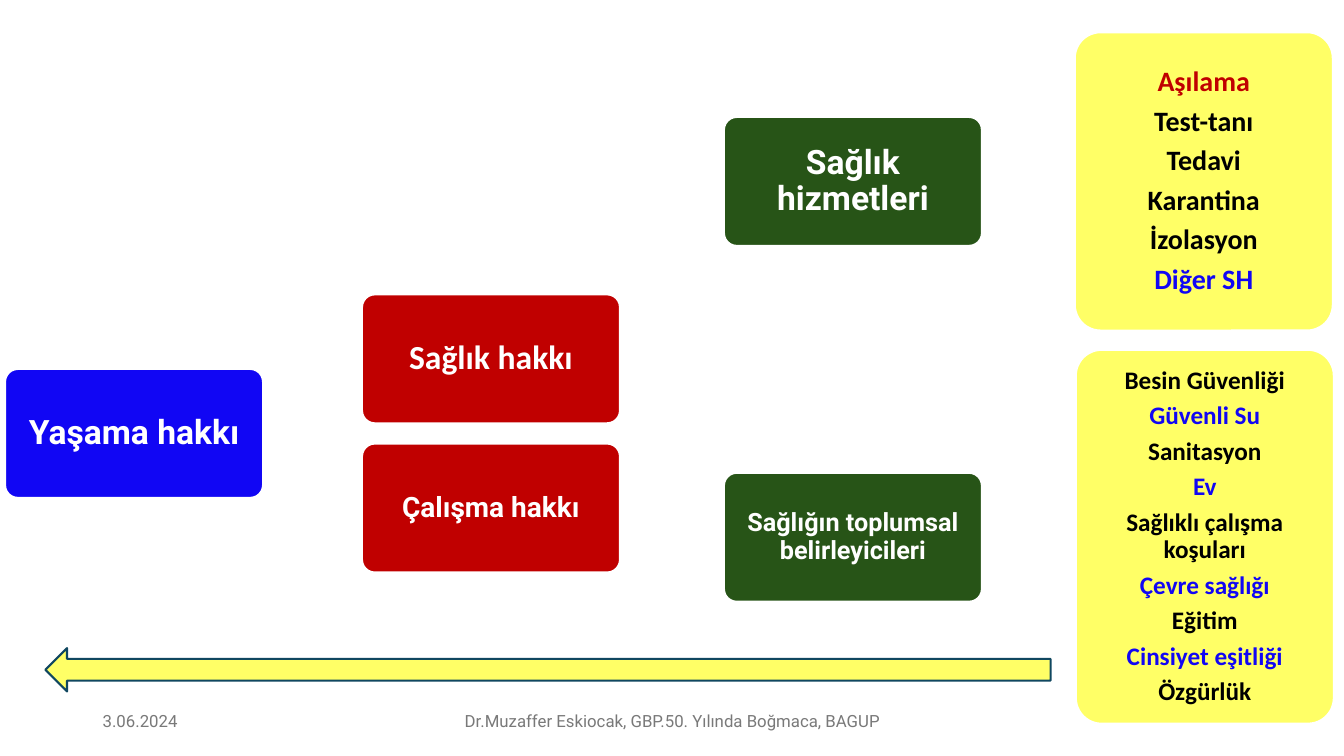
from pptx import Presentation
from pptx.dml.color import RGBColor
from pptx.enum.shapes import MSO_SHAPE
from pptx.enum.text import MSO_ANCHOR, PP_ALIGN
from pptx.util import Inches, Pt

BLUE, RED, GREEN, YELLOW = "1106F4", "C00000", "275417", "FFFF66"
WHITE, BLACK, GRAY, NAVY = "FFFFFF", "000000", "797979", "104760"


def add_filled(kind, left, top, width, height, fill, line):
    shape = slide.shapes.add_shape(
        kind, Inches(left), Inches(top), Inches(width), Inches(height))
    shape.shadow.inherit = False
    shape.fill.solid()
    shape.fill.fore_color.rgb = RGBColor.from_string(fill)
    shape.line.color.rgb = RGBColor.from_string(line)
    shape.line.width = Pt(1.5)
    return shape


def format_paragraph(paragraph, font_name, size, color, align, bold=False):
    paragraph.alignment = align
    font = paragraph.runs[0].font
    font.name = font_name
    font.size = Pt(size)
    font.bold = bold
    font.color.rgb = RGBColor.from_string(color)


prs = Presentation()
prs.slide_width = Inches(13.33)
prs.slide_height = Inches(7.5)
slide = prs.slides.add_slide(prs.slide_layouts[6])

# Rights tree: left, top, height, fill, font, size, lines with their colours
BOX_WIDTH, BOX_HEIGHT = 2.56, 1.28
services = [("Aşılama", RED), ("Test-tanı", BLACK), ("Tedavi", BLACK),
            ("Karantina", BLACK), ("İzolasyon", BLACK), ("Diğer SH", BLUE)]
determinants = [("Besin Güvenliği", BLACK), ("Güvenli Su", BLUE),
                ("Sanitasyon", BLACK), ("Ev", BLUE),
                ("Sağlıklı çalışma koşuları", BLACK), ("Çevre sağlığı", BLUE),
                ("Eğitim", BLACK), ("Cinsiyet eşitliği", BLUE),
                ("Özgürlük", BLACK)]
tree = [
    (0.05, 3.66, BOX_HEIGHT, BLUE, "Roboto", 24, [("Yaşama hakkı", WHITE)]),
    (3.59, 2.92, BOX_HEIGHT, RED, "Calibri", 24, [("Sağlık hakkı", WHITE)]),
    (3.59, 4.4, BOX_HEIGHT, RED, "Roboto", 20, [("Çalışma hakkı", WHITE)]),
    (7.18, 1.16, BOX_HEIGHT, GREEN, "Roboto", 24,
     [("Sağlık hizmetleri", WHITE)]),
    (7.18, 4.69, BOX_HEIGHT, GREEN, "Roboto", 18,
     [("Sağlığın toplumsal belirleyicileri", WHITE)]),
    (10.66, 0.32, 2.96, YELLOW, "Calibri", 20, services),
    (10.67, 3.47, 3.71, YELLOW, "Calibri", 18, determinants),
]
for left, top, height, fill, font_name, size, lines in tree:
    box = add_filled(MSO_SHAPE.ROUNDED_RECTANGLE, left, top, BOX_WIDTH, height,
                     fill, WHITE)
    box.adjustments[0] = 0.1
    frame = box.text_frame
    frame.word_wrap = True
    frame.vertical_anchor = MSO_ANCHOR.MIDDLE
    frame.margin_left = frame.margin_right = Inches(0.02)
    frame.margin_top = frame.margin_bottom = Inches(0.02)
    frame.text = "\n".join(text for text, _ in lines)
    for paragraph, (_, color) in zip(frame.paragraphs, lines):
        format_paragraph(paragraph, font_name, size, color, PP_ALIGN.CENTER, True)
        paragraph.line_spacing = 0.9
        paragraph.space_after = Pt(size * 0.33)

add_filled(MSO_SHAPE.LEFT_ARROW, 0.45, 6.43, 9.97, 0.43, YELLOW, NAVY)

# Footer
for left, width, text, align in [
    (0.92, 3, "3.06.2024", PP_ALIGN.LEFT),
    (4.42, 4.5, "Dr.Muzaffer Eskiocak, GBP.50. Yılında Boğmaca, BAGUP",
     PP_ALIGN.CENTER),
]:
    footer = slide.shapes.add_textbox(
        Inches(left), Inches(6.95), Inches(width), Inches(0.4)).text_frame
    footer.word_wrap = True
    footer.vertical_anchor = MSO_ANCHOR.MIDDLE
    footer.text = text
    format_paragraph(footer.paragraphs[0], "Roboto", 12, GRAY, align)

prs.save("out.pptx")
